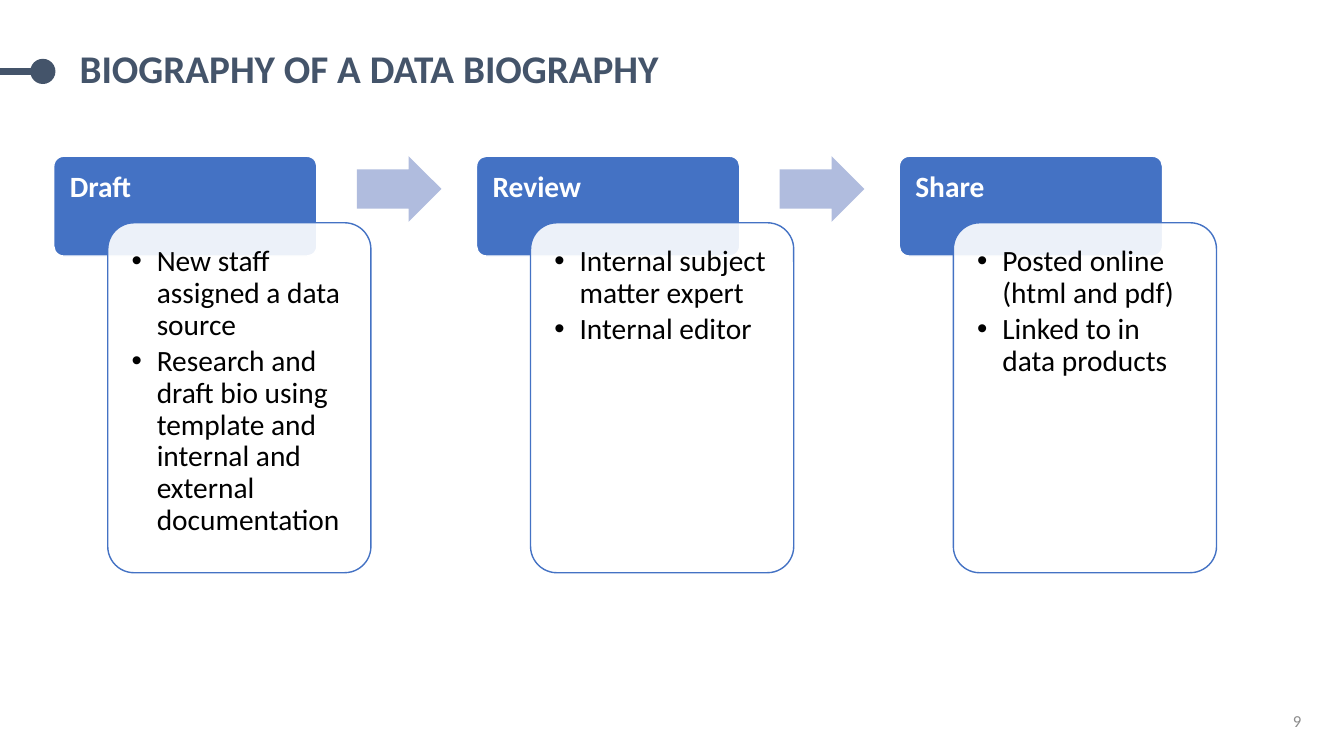
from lxml.etree import SubElement as Sub
from pptx import Presentation
from pptx.dml.color import RGBColor
from pptx.enum.shapes import MSO_CONNECTOR as Conn, MSO_SHAPE as Shape
from pptx.enum.text import MSO_ANCHOR as Anchor, PP_ALIGN as Align
from pptx.oxml.ns import qn
from pptx.util import Pt

NAVY, BLUE, PALE, WHITE = "44546A", "4472C4", "B0BCDE", "FFFFFF"
LEFT, TOP, PITCH = 38.4, 111.6, 302
STEPS = [
    ("Draft", ["New staff assigned a data source",
               "Research and draft bio using template and internal and "
               "external documentation"]),
    ("Review", ["Internal subject matter expert", "Internal editor"]),
    ("Share", ["Posted online (html and pdf)", "Linked to in data products"]),
]


def color(text):
    return RGBColor.from_string(text)


def apply(item, form):
    for name, value in form.items():
        setattr(item, name, value)


def write(frame, lines, size, ink, bold=False, pad=None, anchor=Anchor.TOP, **form):
    """Fill a text frame; pad gives left, top, right, bottom insets."""
    apply(frame, {"word_wrap": True, "vertical_anchor": anchor})
    if pad:
        sides = ("left", "top", "right", "bottom")
        apply(frame, {f"margin_{side}": Pt(gap) for side, gap in zip(sides, pad)})
    frame.text = "\n".join(lines)
    for para in frame.paragraphs:
        apply(para, {"alignment": Align.LEFT, "line_spacing": 0.9, **form})
        apply(para.font, {"name": "Calibri", "size": Pt(size), "bold": bold})
        para.font.color.rgb = color(ink)


def bullet(frame):
    for para in frame.paragraphs:
        props = para._p.get_or_add_pPr()
        props.set("marL", str(Pt(18)))
        props.set("indent", str(-Pt(18)))
        Sub(props, qn("a:buFont")).set("typeface", "Arial")
        Sub(props, qn("a:buChar")).set("char", "•")


def draw(slide, kind, box, fill, line=None, adjust=(), alpha=None):
    shape = slide.shapes.add_shape(kind, *map(Pt, box))
    shape.shadow.inherit = False
    shape.fill.solid()
    shape.fill.fore_color.rgb = color(fill)
    if alpha:
        tint = shape.fill._xPr.find(qn("a:solidFill"))[0]
        Sub(tint, qn("a:alpha")).set("val", str(alpha * 1000))
    if line:
        shape.line.color.rgb = color(line)
        shape.line.width = Pt(1)
    else:
        shape.line.fill.background()
    for pos, value in enumerate(adjust):
        shape.adjustments[pos] = value
    return shape


def head(slide, text):
    """Set the title and the pin at its left."""
    title = slide.shapes.title
    apply(title, dict(zip(("left", "top", "width", "height"),
                          map(Pt, (49.7, 31.7, 860.4, 64)))))
    write(title.text_frame, [text], 28, NAVY, bold=True)
    stem = slide.shapes.add_connector(Conn.STRAIGHT, *map(Pt, (0, 51, 29, 51)))
    stem.line.color.rgb = color(NAVY)
    stem.line.width = Pt(5.5)
    Sub(stem._element.spPr, qn("a:effectLst"))
    draw(slide, Shape.OVAL, (21.6, 42, 18, 18), NAVY)


def step(slide, left, name, points):
    tab = draw(slide, Shape.ROUNDED_RECTANGLE, (left, TOP, 188, 71.3),
               BLUE, WHITE, [0.1])
    write(tab.text_frame, [name], 21, WHITE, bold=True, pad=(9.4, 9.4, 9.4, 6.5))
    card = draw(slide, Shape.ROUNDED_RECTANGLE, (left + 38.6, TOP + 47.5, 188, 250),
                WHITE, BLUE, [0.1], alpha=90)
    write(card.text_frame, points, 21, "000000", pad=(11.5,) * 4,
          space_after=Pt(3.2))
    bullet(card.text_frame)


def number(slide, text):
    box = slide.shapes.add_textbox(*map(Pt, (678.2, 500.4, 258.5, 28.8)))
    write(box.text_frame, [text], 12, "8C8C8C", anchor=Anchor.MIDDLE,
          alignment=Align.RIGHT, line_spacing=1.0)


def main():
    deck = Presentation()
    deck.slide_width, deck.slide_height = Pt(960), Pt(540)
    slide = deck.slides.add_slide(deck.slide_layouts[5])
    head(slide, "BIOGRAPHY OF A DATA BIOGRAPHY")
    for pos, (name, points) in enumerate(STEPS):
        left = LEFT + pos * PITCH
        if pos:
            draw(slide, Shape.RIGHT_ARROW, (left - 85.5, TOP, 60.5, 46.8),
                 PALE, adjust=[0.6, 0.5])
        step(slide, left, name, points)
    number(slide, "9")
    deck.save("out.pptx")


if __name__ == "__main__":
    main()
